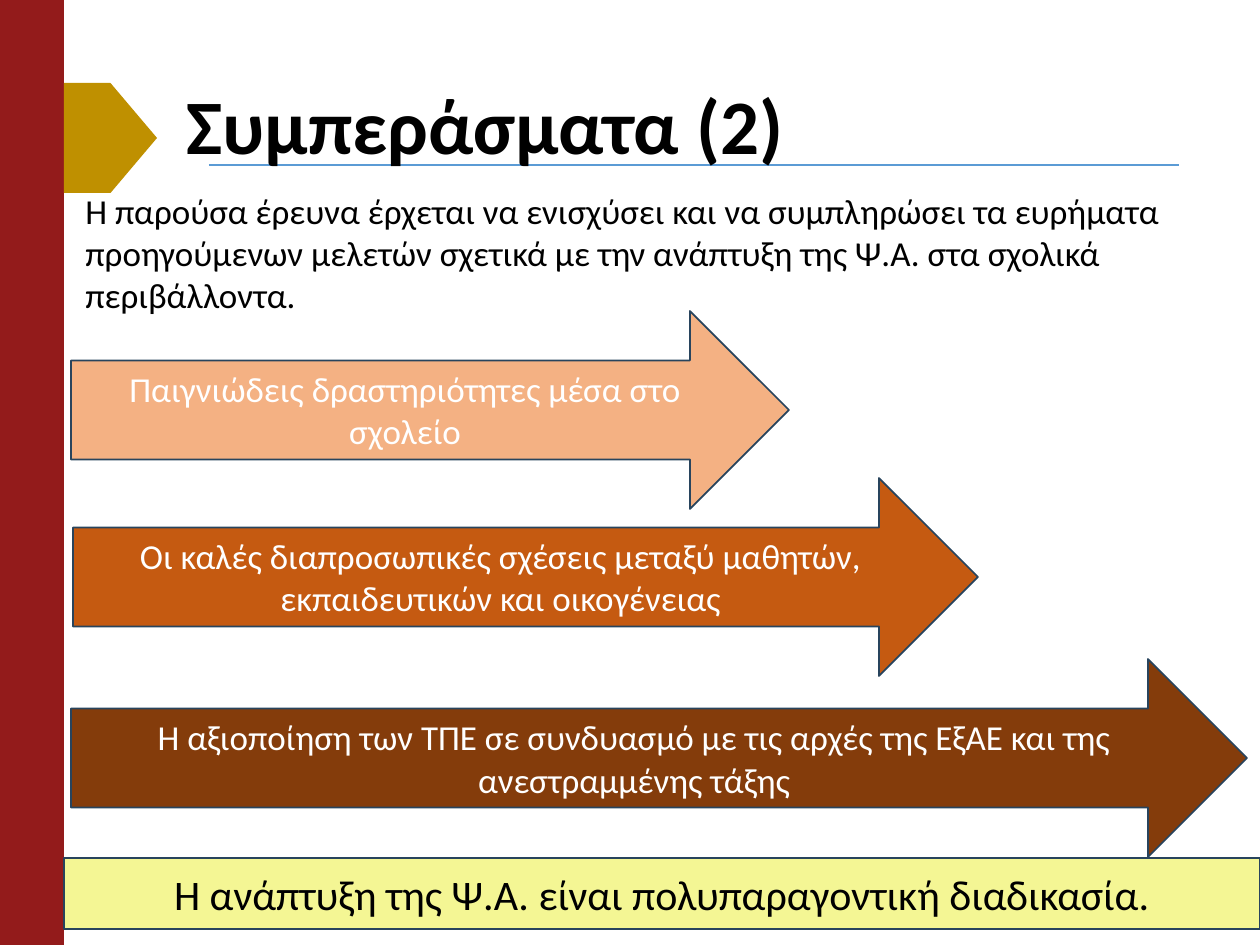
import pptx
import pptx.util
import pptx.dml.color
import pptx.enum.shapes
import pptx.enum.text
import pptx.oxml.ns
import lxml.etree

RGB = pptx.dml.color.RGBColor
KIND = pptx.enum.shapes.MSO_SHAPE
ALIGN = pptx.enum.text.PP_ALIGN
MIDDLE = pptx.enum.text.MSO_ANCHOR.MIDDLE

BLACK = RGB(0x00, 0x00, 0x00)
WHITE = RGB(0xFF, 0xFF, 0xFF)
RED = RGB(0x93, 0x1B, 0x1B)
GOLD = RGB(0xBF, 0x90, 0x00)
BLUE = RGB(0x5B, 0x9B, 0xD5)
NAVY = RGB(0x28, 0x44, 0x5D)
PEACH = RGB(0xF4, 0xB1, 0x83)
ORANGE = RGB(0xC5, 0x5A, 0x11)
BROWN = RGB(0x84, 0x3C, 0x0B)
YELLOW = RGB(0xF4, 0xF6, 0x94)

WIDTH, HEIGHT = 1260, 945
BAR = 64


def emu(px):
    return round(px * 914400 / 126)


class Page:
    font = "Calibri"

    def __init__(self, slide):
        self.slide = slide

    def fill_in(self, frame, text, size, color, align=None, bold=False):
        """Put styled text in a frame and return its paragraph."""
        frame.word_wrap = True
        frame.text = text
        para = frame.paragraphs[0]
        para.alignment = align
        font = para.runs[0].font
        font.name = self.font
        font.size = pptx.util.Pt(size)
        font.bold = bold
        font.color.rgb = color
        return para

    def shape(self, kind, box, fill, edge=None):
        item = self.slide.shapes.add_shape(kind, *map(emu, box))
        item.shadow.inherit = False
        item.fill.solid()
        item.fill.fore_color.rgb = fill
        if edge is None:
            item.line.fill.background()
        else:
            item.line.color.rgb = edge
            item.line.width = pptx.util.Pt(1)
        return item

    def label(self, kind, box, fill, text, size, color):
        """Outlined shape with centred text."""
        frame = self.shape(kind, box, fill, NAVY).text_frame
        frame.vertical_anchor = MIDDLE
        self.fill_in(frame, text, size, color, ALIGN.CENTER)

    def text(self, box, text, size, bold=False):
        frame = self.slide.shapes.add_textbox(*map(emu, box)).text_frame
        return frame, self.fill_in(frame, text, size, BLACK, bold=bold)

    def rule(self, ends, color):
        line = self.slide.shapes.add_connector(
            pptx.enum.shapes.MSO_CONNECTOR.STRAIGHT, *map(emu, ends))
        line.line.color.rgb = color
        line.line.width = pptx.util.Pt(0.75)
        props = line._element.spPr
        lxml.etree.SubElement(props, pptx.oxml.ns.qn("a:effectLst"))


def main():
    deck = pptx.Presentation()
    deck.slide_width, deck.slide_height = emu(WIDTH), emu(HEIGHT)
    page = Page(deck.slides.add_slide(deck.slide_layouts[6]))

    page.shape(KIND.RECTANGLE, (0, 0, BAR, HEIGHT), RED)
    page.rule((209, 165, 1179, 165), BLUE)
    page.shape(KIND.PENTAGON, (BAR, 83, 93, 110), GOLD)

    page.text((73, 183, 1173, 242),
              "Η παρούσα έρευνα έρχεται να ενισχύσει και να συμπληρώσει "
              "τα ευρήματα προηγούμενων μελετών σχετικά με την ανάπτυξη "
              "της Ψ.Α. στα σχολικά περιβάλλοντα.", 20)
    frame, para = page.text((174, 55, 1016, 149), "Συμπεράσματα (2)", 44, True)
    frame.vertical_anchor = MIDDLE
    para.line_spacing = 0.9

    arrows = [
        (71, 311, 718, PEACH, "Παιγνιώδεις δραστηριότητες μέσα στο σχολείο"),
        (73, 478, 905, ORANGE, "Οι καλές διαπροσωπικές σχέσεις μεταξύ "
         "μαθητών, εκπαιδευτικών και οικογένειας"),
        (71, 659, 1176, BROWN, "Η αξιοποίηση των ΤΠΕ σε συνδυασμό με τις "
         "αρχές της ΕξΑΕ και της ανεστραμμένης τάξης"),
    ]
    for left, top, width, fill, text in arrows:
        page.label(KIND.RIGHT_ARROW, (left, top, width, 198), fill, text,
                   20, WHITE)

    page.label(KIND.RECTANGLE, (BAR, 858, WIDTH - BAR, 71), YELLOW,
               "Η ανάπτυξη της Ψ.Α. είναι πολυπαραγοντική διαδικασία.",
               24, BLACK)
    deck.save("out.pptx")


if __name__ == "__main__":
    main()
